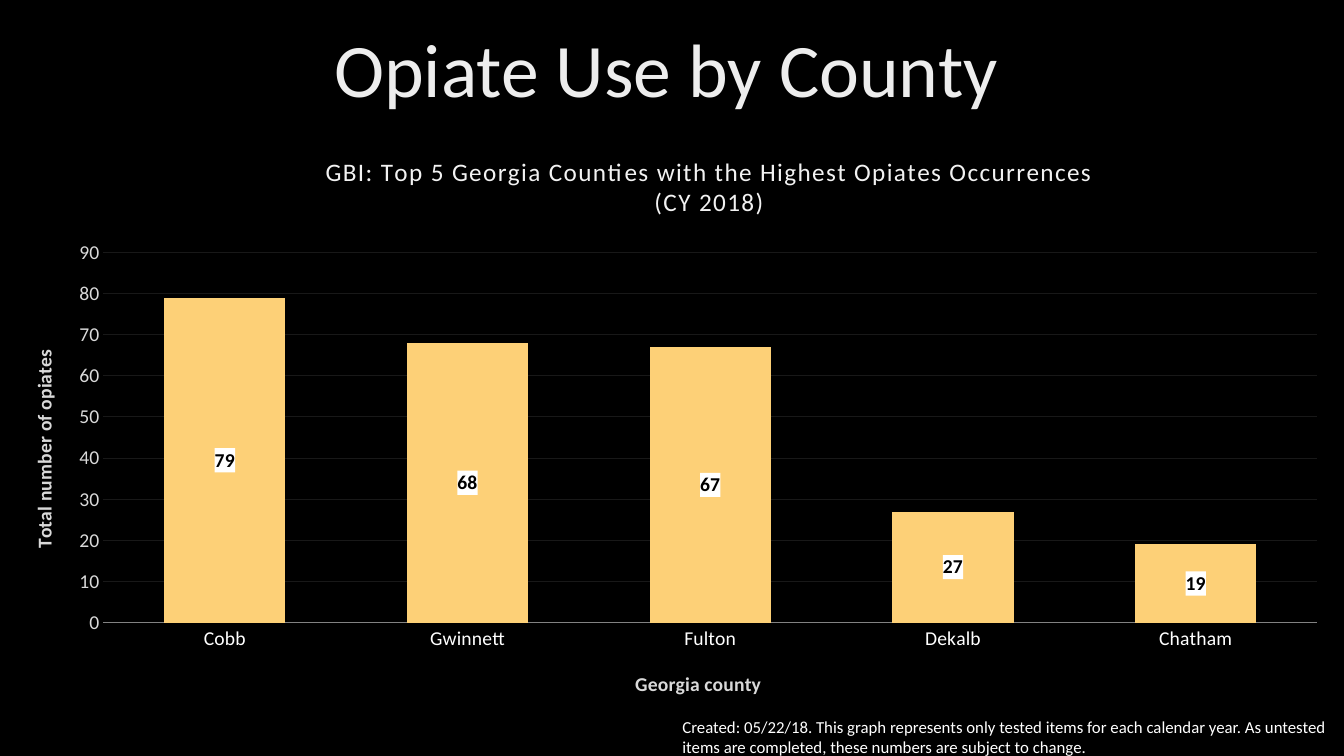
from dataclasses import dataclass

from lxml.etree import SubElement
from pptx import Presentation
from pptx.chart.data import CategoryChartData
from pptx.dml.color import RGBColor
from pptx.enum.chart import XL_CHART_TYPE as ChartType
from pptx.enum.chart import XL_LABEL_POSITION as LabelPosition
from pptx.enum.chart import XL_TICK_MARK as TickMark
from pptx.enum.text import MSO_ANCHOR as Anchor
from pptx.enum.text import PP_ALIGN as Align
from pptx.oxml import parse_xml
from pptx.oxml.ns import nsdecls, qn
from pptx.util import Inches, Pt


@dataclass(frozen=True)
class Theme:
    font: str = "Calibri"
    background: str = "000000"
    text: str = "FFFFFF"
    heading: str = "F2F2F2"
    muted: str = "D9D9D9"
    bar: str = "FDD077"
    label: str = "000000"
    label_box: str = "FFFFFF"
    baseline: str = "828282"
    grid: str = "181818"
    title_stops: tuple = ((0, "BFBFBF"), (28, "EDEDED"), (100, "FFFFFF"))
    title_size: int = 54
    chart_title_size: int = 18
    axis_size: int = 14
    note_size: int = 12


def rgb(code):
    return RGBColor.from_string(code)


def style(font, face, size, color=None, bold=False):
    font.name, font.size, font.bold = face, Pt(size), bold
    if color:
        font.color.rgb = rgb(color)


def write(paragraph, text, align=None, spacing=None, **format):
    paragraph.alignment = align
    paragraph.line_spacing = spacing
    run = paragraph.add_run()
    run.text = text
    style(run.font, **format)
    return run


def place(element, index, x, y, w=None, h=None):
    for old in element.findall(qn("c:layout")):
        element.remove(old)
    layout = parse_xml(f"<c:layout {nsdecls('c')}/>")
    manual = SubElement(layout, qn("c:manualLayout"))
    settings = [("xMode", "edge"), ("yMode", "edge"), ("x", x), ("y", y)]
    if w:
        settings = [("layoutTarget", "inner")] + settings + [("w", w), ("h", h)]
    for tag, value in settings:
        SubElement(manual, qn(f"c:{tag}")).set("val", str(value))
    element.insert(index, layout)


class SlideBuilder:
    def __init__(self, slide, theme):
        self.slide, self.theme = slide, theme
        fill = slide.background.fill
        fill.solid()
        fill.fore_color.rgb = rgb(theme.background)

    def title(self, text, left, top, width, height):
        heading = self.slide.shapes.title
        heading.left, heading.top = Inches(left), Inches(top)
        heading.width, heading.height = Inches(width), Inches(height)
        heading.text_frame.vertical_anchor = Anchor.MIDDLE
        run = write(heading.text_frame.paragraphs[0], text, align=Align.CENTER,
                    spacing=0.9, face=self.theme.font, size=self.theme.title_size)
        stops = "".join(
            f'<a:gs pos="{position * 1000}"><a:srgbClr val="{color}"/></a:gs>'
            for position, color in self.theme.title_stops)
        run.font._element.insert(0, parse_xml(
            f"<a:gradFill {nsdecls('a')}><a:gsLst>{stops}</a:gsLst>"
            '<a:lin ang="4800000" scaled="0"/></a:gradFill>'))

    def note(self, text, left, top, width, height):
        box = self.slide.shapes.add_textbox(
            Inches(left), Inches(top), Inches(width), Inches(height))
        box.text_frame.word_wrap = True
        write(box.text_frame.paragraphs[0], text, face=self.theme.font,
              size=self.theme.note_size, color=self.theme.text)

    def column_chart(self, title, counts, left, top, width, height):
        theme = self.theme
        data = CategoryChartData()
        data.categories = list(counts)
        data.add_series("Series 1", list(counts.values()))
        chart = self.slide.shapes.add_chart(
            ChartType.COLUMN_CLUSTERED, Inches(left), Inches(top),
            Inches(width), Inches(height), data).chart
        style(chart.font, theme.font, 10, theme.text)
        chart.has_legend = False
        chart.has_title = True
        frame = chart.chart_title.text_frame
        for number, line in enumerate(title):
            paragraph = frame.add_paragraph() if number else frame.paragraphs[0]
            run = write(paragraph, line, align=Align.CENTER, face=theme.font,
                        size=theme.chart_title_size, color=theme.heading)
            run.font._element.set("spc", "100")
        place(chart.chart_title._element, 1, 0.24, 0.07)
        place(chart._chartSpace.chart.plotArea, 0, 0.077, 0.236, 0.903, 0.612)
        self.columns(chart.plots[0])
        return chart

    def columns(self, plot):
        theme = self.theme
        plot.gap_width, plot.overlap, plot.vary_by_categories = 100, -24, False
        series = plot.series[0]
        series.format.fill.solid()
        series.format.fill.fore_color.rgb = rgb(theme.bar)
        labels = series.data_labels
        labels.show_value = True
        labels.position = LabelPosition.CENTER
        style(labels.font, theme.font, theme.axis_size, theme.label, bold=True)
        labels._element.find(qn("c:txPr")).addprevious(parse_xml(
            f"<c:spPr {nsdecls('c', 'a')}><a:solidFill>"
            f'<a:srgbClr val="{theme.label_box}"/></a:solidFill></c:spPr>'))

    def axis(self, axis, title, color, x, y):
        theme = self.theme
        axis.major_tick_mark = axis.minor_tick_mark = TickMark.NONE
        style(axis.tick_labels.font, theme.font, theme.axis_size, color)
        axis.has_title = True
        write(axis.axis_title.text_frame.paragraphs[0], title, face=theme.font,
              size=theme.axis_size, color=theme.muted, bold=True)
        place(axis.axis_title._element, 1, x, y)

    def line(self, line, color, width):
        line.color.rgb = rgb(color)
        line.width = Pt(width)


def main():
    deck = Presentation()
    deck.slide_width, deck.slide_height = Inches(13.33), Inches(7.5)
    theme = Theme()
    builder = SlideBuilder(deck.slides.add_slide(deck.slide_layouts[5]), theme)

    builder.title("Opiate Use by County ", 0.94, 0, 11.5, 1.45)
    opiates = {"Cobb": 79, "Gwinnett": 68, "Fulton": 67, "Dekalb": 27, "Chatham": 19}
    chart = builder.column_chart(
        ("GBI: Top 5 Georgia Counties with the Highest Opiates Occurrences",
         "(CY 2018)"), opiates, 0, 1.09, 13.33, 6)

    counties, totals = chart.category_axis, chart.value_axis
    builder.axis(counties, "Georgia county", theme.text, 0.47, 0.92)
    builder.line(counties.format.line, theme.baseline, 1)
    builder.axis(totals, "Total number of opiates", theme.muted, 0.02, 0.39)
    totals.minimum_scale, totals.maximum_scale, totals.major_unit = 0, 90, 10
    totals.format.line.fill.background()
    builder.line(totals.major_gridlines.format.line, theme.grid, 0.75)

    builder.note(
        "Created: 05/22/18. This graph represents only tested items for each "
        "calendar year. As untested items are completed, these numbers are "
        "subject to change.", 6.67, 7.06, 6.67, 0.5)
    deck.save("out.pptx")


if __name__ == "__main__":
    main()
